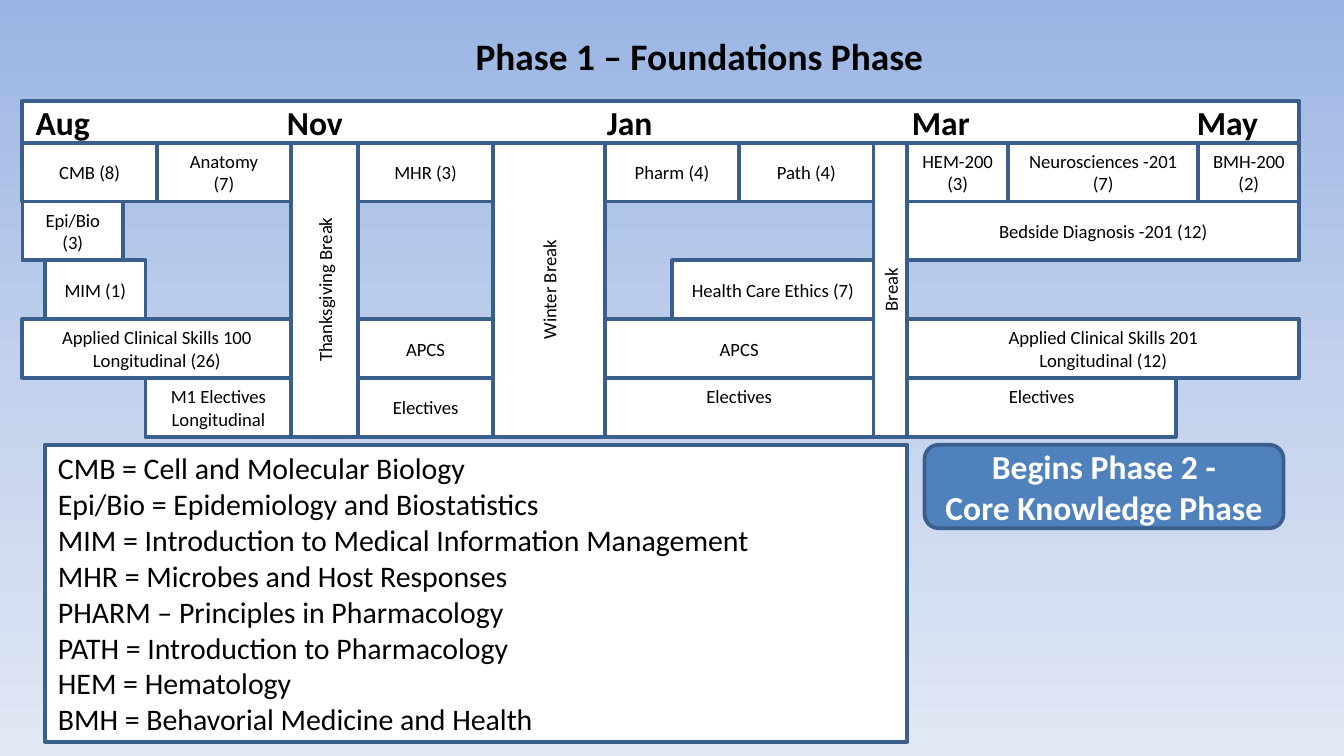
from copy import deepcopy
from dataclasses import dataclass

from lxml.etree import SubElement
from pptx import Presentation
from pptx.dml.color import RGBColor as Rgb
from pptx.enum.shapes import MSO_SHAPE as Shape
from pptx.enum.text import MSO_ANCHOR as Anchor, MSO_AUTO_SIZE as AutoSize, PP_ALIGN as Align
from pptx.oxml.ns import qn
from pptx.util import Inches, Pt


@dataclass(frozen=True)
class Theme:
    """Colours, font and type sizes of the slide."""
    font: str = "Calibri"
    ink: str = "000000"
    paper: str = "FFFFFF"
    border: str = "3A5F8C"
    accent: str = "4F81BD"
    sky: tuple = ((0, "9AB5E4"), (0.5, "C2D1ED"), (1, "E1E8F5"))
    title: int = 20
    heading: int = 18
    legend: int = 16
    course: int = 10


THEME = Theme()
COLUMN = 1 / 12
ROW = 7 / 16
HEADER_TOP = 0.75
GRID_TOP = HEADER_TOP + 5 / 16
BELOW_GRID = 3.31

COURSES = [
    (2, 14, 0, "CMB (8)"),
    (14, 26, 0, "Anatomy\v(7)"),
    (2, 11, 1, "Epi/Bio (3)"),
    (4, 13, 2, "MIM (1)"),
    (2, 26, 3, "Applied Clinical Skills 100\nLongitudinal (26)"),
    (13, 26, 4, "M1 Electives\nLongitudinal"),
    (32, 44, 0, "MHR (3)"),
    (32, 44, 3, "APCS"),
    (32, 44, 4, "Electives"),
    (54, 66, 0, "Pharm (4)"),
    (66, 78, 0, "Path (4)"),
    (81, 90, 0, "HEM-200 (3)"),
    (90, 107, 0, "Neurosciences -201 (7)"),
    (107, 116, 0, "BMH-200 (2)"),
    (60, 78, 2, "Health Care Ethics (7)"),
    (54, 78, 3, "APCS"),
    (81, 116, 1, "Bedside Diagnosis -201 (12)"),
    (81, 116, 3, "Applied Clinical Skills 201\nLongitudinal (12)"),
]
TOP_ALIGNED_COURSES = [(54, 78, 4, "Electives"), (81, 105, 4, "Electives")]
BREAKS = [(26, 32, "Thanksgiving Break"), (44, 54, "Winter Break"), (78, 81, "Break")]
MONTHS = ["Aug", "Nov", "Jan", "Mar", "May"]
MONTH_STOPS = [1.87, 4.25, 6.52, 8.64]
LEGEND = [
    "CMB = Cell and Molecular Biology",
    "Epi/Bio = Epidemiology and Biostatistics",
    "MIM = Introduction to Medical Information Management",
    "MHR = Microbes and Host Responses",
    "PHARM – Principles in Pharmacology",
    "PATH = Introduction to Pharmacology",
    "HEM = Hematology",
    "BMH = Behavorial Medicine and Health",
]


def write(frame, text, size, align=Align.CENTER, color=THEME.ink, bold=False):
    """Put text in a frame and format every paragraph alike."""
    frame.text = text
    frame.word_wrap = True
    for paragraph in frame.paragraphs:
        paragraph.alignment = align
        font = paragraph.font
        font.name, font.size, font.bold = THEME.font, Pt(size), bold
        font.color.rgb = Rgb.from_string(color)


def add_box(slide, left, top, width, height, text, size=THEME.course,
            kind=Shape.RECTANGLE, fill=THEME.paper, anchor=Anchor.MIDDLE, **style):
    """Add a bordered box with text and return its text frame."""
    box = slide.shapes.add_shape(kind, *map(Inches, (left, top, width, height)))
    box.shadow.inherit = False
    box.fill.solid()
    box.fill.fore_color.rgb = Rgb.from_string(fill)
    box.line.color.rgb = Rgb.from_string(THEME.border)
    box.line.width = Pt(2)
    box.text_frame.vertical_anchor = anchor
    write(box.text_frame, text, size, **style)
    return box.text_frame


def add_course(slide, start, end, row, text, rows=1, anchor=Anchor.MIDDLE):
    """Add a calendar block between two grid columns."""
    return add_box(slide, start * COLUMN, GRID_TOP + row * ROW,
                   (end - start) * COLUMN, rows * ROW, text, anchor=anchor)


def add_break(slide, start, end, text):
    """Add a full-height break with text reading upwards."""
    frame = add_course(slide, start, end, 0, text, rows=5)
    frame._txBody.bodyPr.set("vert", "vert270")


def add_months(slide):
    """Add the header bar with the months on tab stops."""
    frame = add_box(slide, 2 * COLUMN, HEADER_TOP, 114 * COLUMN, GRID_TOP - HEADER_TOP,
                    "\t".join(MONTHS), THEME.heading, align=Align.LEFT, bold=True)
    properties = frame.paragraphs[0]._p.get_or_add_pPr()
    stops = properties.find(qn("a:tabLst"))
    if stops is None:
        stops = properties.makeelement(qn("a:tabLst"))
        properties.insert_element_before(stops, "a:defRPr", "a:extLst")
    for position in MONTH_STOPS:
        SubElement(stops, qn("a:tab"), pos=str(Inches(position)), algn="l")


def paint_background(slide):
    """Fill the background with the vertical sky gradient."""
    fill = slide.background.fill
    fill.gradient()
    fill.gradient_angle = 270
    stops = slide.element.find(".//" + qn("a:gsLst"))
    stops.append(deepcopy(stops[0]))
    for stop, (position, color) in zip(fill.gradient_stops, THEME.sky):
        stop.position = position
        stop.color.rgb = Rgb.from_string(color)


def add_title(slide, text):
    """Place and format the title placeholder."""
    title = slide.shapes.title
    title.left, title.top, title.width, title.height = map(Inches, (1.33, 0.19, 7.75, 0.44))
    title.text_frame.auto_size = AutoSize.NONE
    write(title.text_frame, text, THEME.title, bold=True)


def main():
    """Build the curriculum slide."""
    deck = Presentation()
    deck.slide_width, deck.slide_height = Inches(10), Inches(45 / 8)
    slide = deck.slides.add_slide(deck.slide_layouts.get_by_name("Title Only"))
    paint_background(slide)
    add_title(slide, "Phase 1 – Foundations Phase")
    for course in COURSES:
        add_course(slide, *course)
    for course in TOP_ALIGNED_COURSES:
        add_course(slide, *course, anchor=Anchor.TOP)
    for pause in BREAKS:
        add_break(slide, *pause)
    add_months(slide)
    add_box(slide, 4 * COLUMN, BELOW_GRID, 77 * COLUMN, 2.21,
            "\n".join(LEGEND), THEME.legend, align=Align.LEFT)
    add_box(slide, 6.88, BELOW_GRID, 2.67, 0.62, "Begins Phase 2 -\nCore Knowledge Phase",
            THEME.heading, kind=Shape.ROUNDED_RECTANGLE, fill=THEME.accent,
            color=THEME.paper, bold=True)
    deck.save("out.pptx")


if __name__ == "__main__":
    main()
